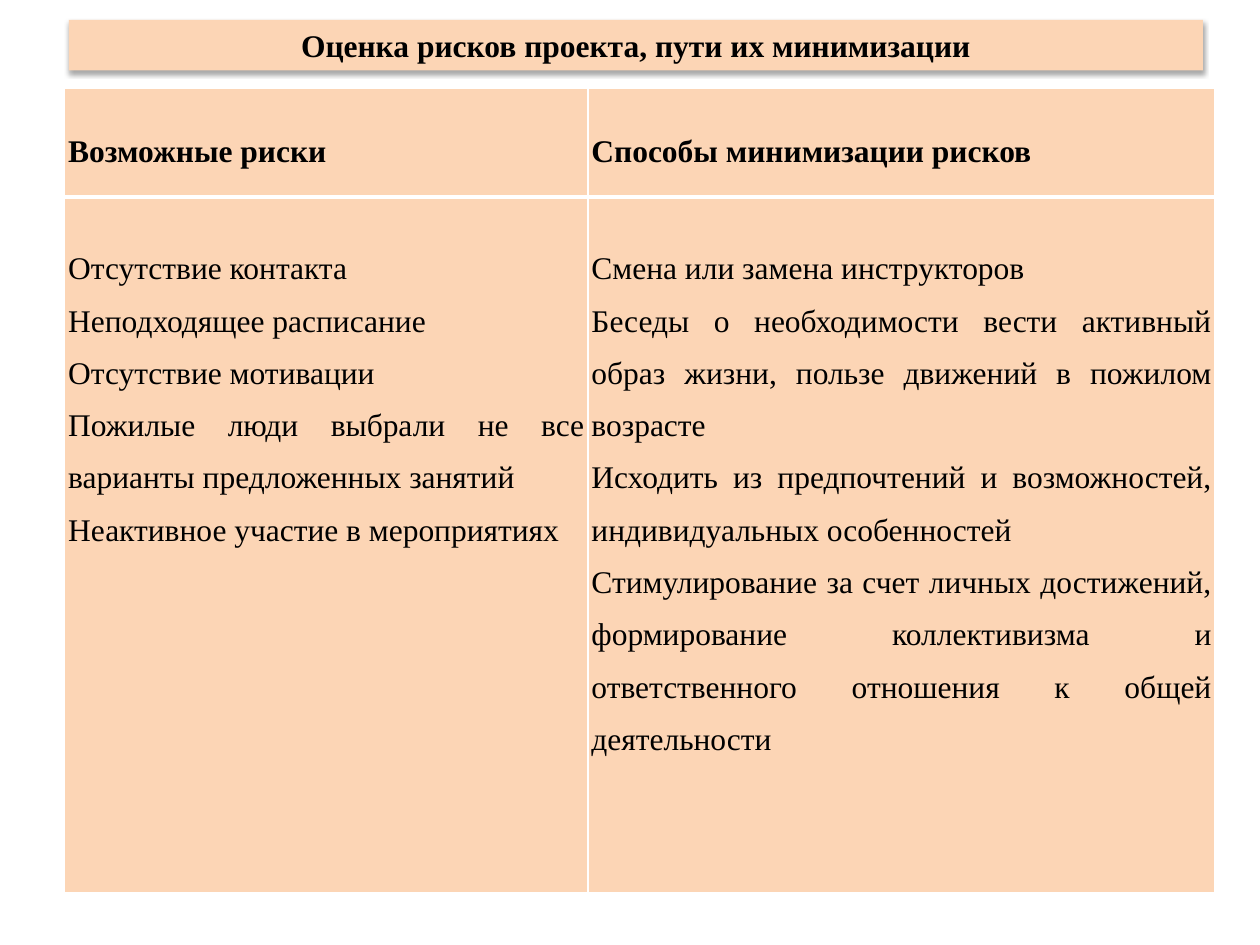
from lxml.etree import SubElement
from pptx import Presentation
from pptx.dml.color import RGBColor
from pptx.enum.text import MSO_ANCHOR, MSO_AUTO_SIZE, PP_ALIGN
from pptx.oxml.ns import qn
from pptx.util import Pt

PEACH = RGBColor(0xFC, 0xD5, 0xB5)
BLACK = RGBColor(0, 0, 0)
WHITE = RGBColor(0xFF, 0xFF, 0xFF)
FONT = "Times New Roman"
TEXT_SIZE = Pt(18)

TITLE = "Оценка рисков проекта, пути их минимизации"
HEADERS = ["Возможные риски", "Способы минимизации рисков"]
RISKS = [
    "Отсутствие контакта",
    "Неподходящее расписание",
    "Отсутствие мотивации",
    "Пожилые люди выбрали не все варианты предложенных занятий",
    "Неактивное участие в мероприятиях",
]
REMEDIES = [
    "Смена или замена инструкторов",
    "Беседы о необходимости вести активный образ жизни, пользе движений "
    "в пожилом возрасте",
    "Исходить из предпочтений и возможностей, индивидуальных особенностей",
    "Стимулирование за счет личных достижений, формирование коллективизма "
    "и ответственного отношения к общей деятельности",
]


def add_text(paragraph, text, bold):
    """Add one run in the slide's text style."""
    run = paragraph.add_run()
    run.text = text
    run.font.name = FONT
    run.font.size = TEXT_SIZE
    run.font.bold = bold
    run.font.color.rgb = BLACK


def add_shadow(shape):
    """Give a shape a soft shadow that falls straight down."""
    effects = SubElement(shape._element.spPr, qn("a:effectLst"))
    shadow = SubElement(effects, qn("a:outerShdw"), blurRad=str(Pt(3.1)),
                        dist=str(Pt(1.8)), dir="5400000", rotWithShape="0")
    color = SubElement(shadow, qn("a:srgbClr"), val=str(BLACK))
    SubElement(color, qn("a:alpha"), val="35000")


def place_title(slide, left, top, width, height):
    """Format the title placeholder as a shaded band."""
    title = slide.shapes.title
    title.left, title.top, title.width, title.height = left, top, width, height
    title.fill.solid()
    title.fill.fore_color.rgb = PEACH
    add_shadow(title)
    frame = title.text_frame
    frame.word_wrap = True
    frame.auto_size = MSO_AUTO_SIZE.NONE
    frame.vertical_anchor = MSO_ANCHOR.MIDDLE
    paragraph = frame.paragraphs[0]
    paragraph.alignment = PP_ALIGN.CENTER
    add_text(paragraph, TITLE, True)


def set_borders(cell, top, bottom):
    """Draw white cell borders, one point wide at the sides."""
    properties = cell._tc.get_or_add_tcPr()
    for side, width in (("L", 1), ("R", 1), ("T", top), ("B", bottom)):
        line = SubElement(properties, qn(f"a:ln{side}"), w=str(Pt(width)))
        fill = SubElement(line, qn("a:solidFill"))
        SubElement(fill, qn("a:srgbClr"), val=str(WHITE))


def fill_cell(cell, lines, is_header):
    """Style a cell and write one justified paragraph per line."""
    set_borders(cell, top=1 if is_header else 3, bottom=3 if is_header else 1)
    cell.fill.solid()
    cell.fill.fore_color.rgb = PEACH
    cell.margin_left = cell.margin_right = Pt(2)
    cell.margin_top = Pt(0.5 if is_header else 21.4)
    cell.margin_bottom = Pt(0)
    cell.vertical_anchor = MSO_ANCHOR.MIDDLE if is_header else MSO_ANCHOR.TOP
    frame = cell.text_frame
    for index, line in enumerate(lines):
        paragraph = frame.add_paragraph() if index else frame.paragraphs[0]
        paragraph.alignment = PP_ALIGN.JUSTIFY
        paragraph.line_spacing = 1.5
        add_text(paragraph, line, is_header)


def place_risk_table(slide, left, top, width, height):
    """Add the table of risks and the ways to reduce them."""
    table = slide.shapes.add_table(2, 2, left, top, width, height).table
    table.horz_banding = False
    table.columns[0].width = Pt(299)
    table.columns[1].width = width - Pt(299)
    table.rows[0].height = Pt(62)
    table.rows[1].height = height - Pt(62)
    for column, (header, lines) in enumerate(zip(HEADERS, (RISKS, REMEDIES))):
        fill_cell(table.cell(0, column), [header], True)
        fill_cell(table.cell(1, column), lines, False)


def main():
    """Build and save the risk slide."""
    presentation = Presentation()
    presentation.slide_width = Pt(720)
    presentation.slide_height = Pt(540)
    slide = presentation.slides.add_slide(presentation.slide_layouts[5])
    place_title(slide, Pt(39.4), Pt(11.4), Pt(648), Pt(28.8))
    place_risk_table(slide, Pt(37), Pt(50.5), Pt(657.4), Pt(459.4))
    presentation.save("out.pptx")


if __name__ == "__main__":
    main()
